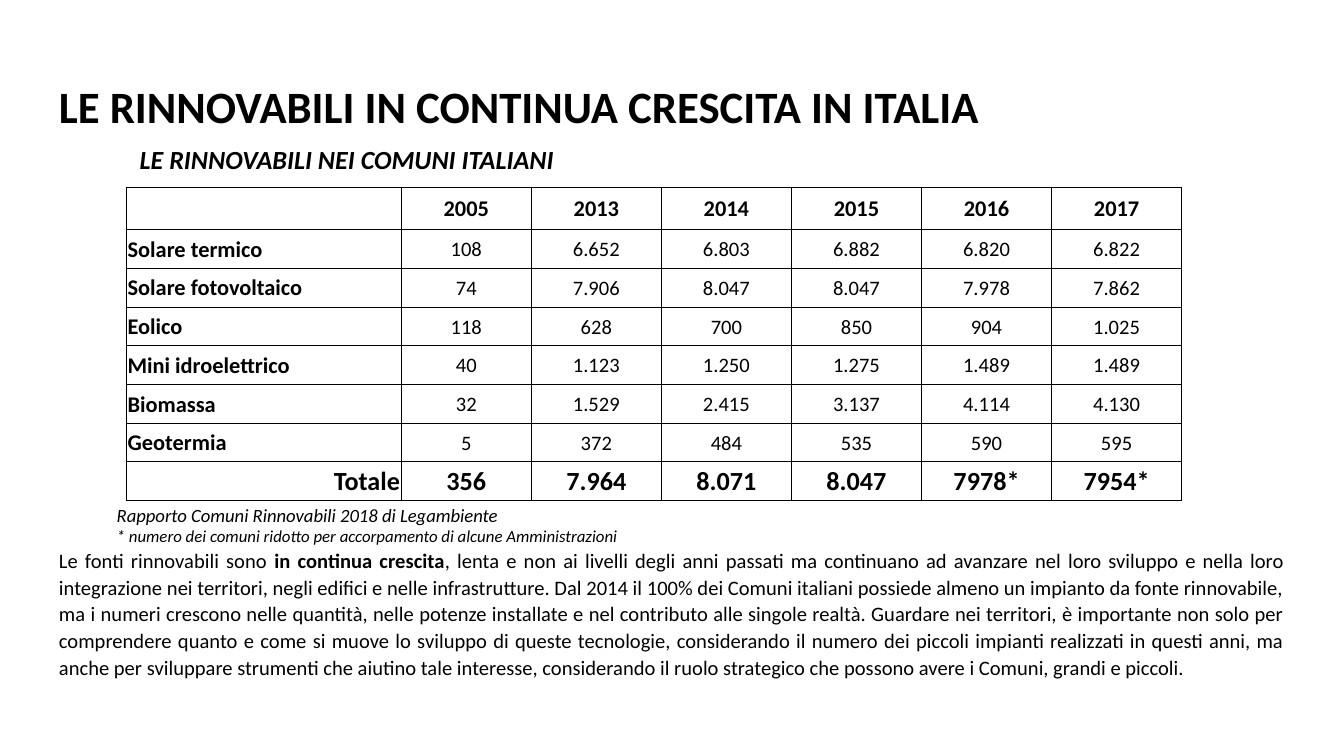
from dataclasses import dataclass, field

import pptx
import pptx.dml.color
import pptx.enum.text
import pptx.oxml.ns
import pptx.util
from lxml import etree

BLACK = pptx.dml.color.RGBColor(0, 0, 0)
WHITE = pptx.dml.color.RGBColor(255, 255, 255)
ALIGN = pptx.enum.text.PP_ALIGN
ANCHOR = pptx.enum.text.MSO_ANCHOR
WIDTH = pptx.util.Inches(10)
HEIGHT = WIDTH * 9 // 16
INSET = pptx.util.Inches(0.1)
CELL_INSET = pptx.util.Inches(0.01)
BORDER = pptx.util.Pt(0.5)

YEARS = ["", "2005", "2013", "2014", "2015", "2016", "2017"]
SOURCES = [
    ["Solare termico", "108", "6.652", "6.803", "6.882", "6.820", "6.822"],
    ["Solare fotovoltaico", "74", "7.906", "8.047", "8.047", "7.978", "7.862"],
    ["Eolico", "118", "628", "700", "850", "904", "1.025"],
    ["Mini idroelettrico", "40", "1.123", "1.250", "1.275", "1.489", "1.489"],
    ["Biomassa", "32", "1.529", "2.415", "3.137", "4.114", "4.130"],
    ["Geotermia", "5", "372", "484", "535", "590", "595"],
]
TOTALS = ["Totale", "356", "7.964", "8.071", "8.047", "7978*", "7954*"]


@dataclass
class Run:
    text: str
    size: float
    style: dict = field(default_factory=dict)


@dataclass
class Area:
    left: float
    top: float
    width: float
    height: float


@dataclass
class TextBlock:
    area: Area
    paragraphs: list[list[Run]]
    layout: dict = field(default_factory=dict)
    top_inset: int = INSET


@dataclass
class TableRow:
    texts: list[str]
    height: float
    label: Run
    value: Run
    label_align: ALIGN = ALIGN.LEFT


def across(percent: float) -> int:
    return round(WIDTH * percent / 100)


def down(percent: float) -> int:
    return round(HEIGHT * percent / 100)


def place(area: Area) -> tuple[int, int, int, int]:
    return across(area.left), down(area.top), across(area.width), down(area.height)


def set_all(target, values: dict) -> None:
    for name, value in values.items():
        setattr(target, name, value)


def format_font(font, run: Run) -> None:
    set_all(font, {"name": "Calibri", "size": pptx.util.Pt(run.size), **run.style})
    font.color.rgb = BLACK


def draw_text(s, block: TextBlock) -> None:
    tf = s.shapes.add_textbox(*place(block.area)).text_frame
    set_all(tf, {
        "word_wrap": True, "vertical_anchor": ANCHOR.TOP,
        "margin_left": INSET, "margin_right": INSET,
        "margin_top": block.top_inset, "margin_bottom": INSET,
    })
    for i, runs in enumerate(block.paragraphs):
        p = tf.add_paragraph() if i else tf.paragraphs[0]
        set_all(p, block.layout)
        for run in runs:
            r = p.add_run()
            r.text = run.text
            format_font(r.font, run)


def draw_borders(cell) -> None:
    props = cell._tc.get_or_add_tcPr()
    for i, side in enumerate(("lnL", "lnR", "lnT", "lnB")):
        line = etree.Element(pptx.oxml.ns.qn(f"a:{side}"), w=str(BORDER))
        fill = etree.SubElement(line, pptx.oxml.ns.qn("a:solidFill"))
        etree.SubElement(fill, pptx.oxml.ns.qn("a:srgbClr"), val=str(BLACK))
        props.insert(i, line)


def draw_cell(cell, text: str, run: Run, align: ALIGN) -> None:
    set_all(cell, {
        "vertical_anchor": ANCHOR.MIDDLE, "margin_left": CELL_INSET,
        "margin_right": CELL_INSET, "margin_top": CELL_INSET, "margin_bottom": 0,
    })
    cell.fill.background()
    draw_borders(cell)
    p = cell.text_frame.paragraphs[0]
    p.alignment = align
    if text:
        r = p.add_run()
        r.text = text
        format_font(r.font, run)
    else:
        format_font(p.font, run)


def draw_table(s, left: float, top: float, columns: list[float], rows: list[TableRow]) -> None:
    area = Area(left, top, sum(columns), sum(row.height for row in rows))
    table = s.shapes.add_table(len(rows), len(columns), *place(area)).table
    set_all(table, {"first_row": False, "horz_banding": False})
    for column, width in zip(table.columns, columns):
        column.width = across(width)
    for y, row in enumerate(rows):
        table.rows[y].height = down(row.height)
        for x, text in enumerate(row.texts):
            run = row.value if x else row.label
            draw_cell(table.cell(y, x), text, run, ALIGN.CENTER if x else row.label_align)


def main() -> None:
    bold, italic = {"bold": True}, {"italic": True}
    heading, total = Run("", 12, bold), Run("", 14, bold)
    blocks = [
        TextBlock(Area(3.4, 8.65, 93.2, 11.2), [
            [Run("LE RINNOVABILI IN CONTINUA CRESCITA IN ITALIA", 24, bold)],
        ]),
        TextBlock(Area(3.4, 70.48, 93.2, 21.16), [[
            Run("Le fonti rinnovabili sono ", 11),
            Run("in continua crescita", 11, bold),
            Run(", lenta e non ai livelli degli anni passati ma continuano ad avanzare nel loro "
                "sviluppo e nella loro integrazione nei territori, negli edifici e nelle "
                "infrastrutture. Dal 2014 il 100% dei Comuni italiani possiede almeno un impianto "
                "da fonte rinnovabile, ma i numeri crescono nelle quantità, nelle potenze "
                "installate e nel contributo alle singole realtà. Guardare nei territori, è "
                "importante non solo per comprendere quanto e come si muove lo sviluppo di queste "
                "tecnologie, considerando il numero dei piccoli impianti realizzati in questi "
                "anni, ma anche per sviluppare strumenti che aiutino tale interesse, considerando "
                "il ruolo strategico che possono avere i Comuni, grandi e piccoli.", 11),
        ]], {"alignment": ALIGN.JUSTIFY, "line_spacing": 1.08}),
        TextBlock(Area(7.7, 66.25, 88.9, 9.07), [
            [Run("Rapporto Comuni Rinnovabili 2018 di Legambiente", 10, italic)],
            [Run("* numero dei comuni ridotto per accorpamento di alcune Amministrazioni", 9, italic)],
        ], top_inset=pptx.util.Inches(0.02)),
        TextBlock(Area(9.4, 17.24, 35.5, 7.64), [
            [Run("LE RINNOVABILI NEI COMUNI ITALIANI", 14, bold | italic)],
        ]),
    ]
    rows = [
        TableRow(YEARS, 5.62, heading, heading),
        *(TableRow(texts, 5.13, heading, Run("", 11)) for texts in SOURCES),
        TableRow(TOTALS, 5.13, total, total, ALIGN.RIGHT),
    ]
    prs = pptx.Presentation()
    set_all(prs, {"slide_width": WIDTH, "slide_height": HEIGHT})
    s = prs.slides.add_slide(prs.slide_layouts[6])
    s.background.fill.solid()
    s.background.fill.fore_color.rgb = WHITE
    for block in blocks:
        draw_text(s, block)
    draw_table(s, 9.4, 24.75, [20.46] + [9.68] * 6, rows)
    prs.save("out.pptx")


if __name__ == "__main__":
    main()
